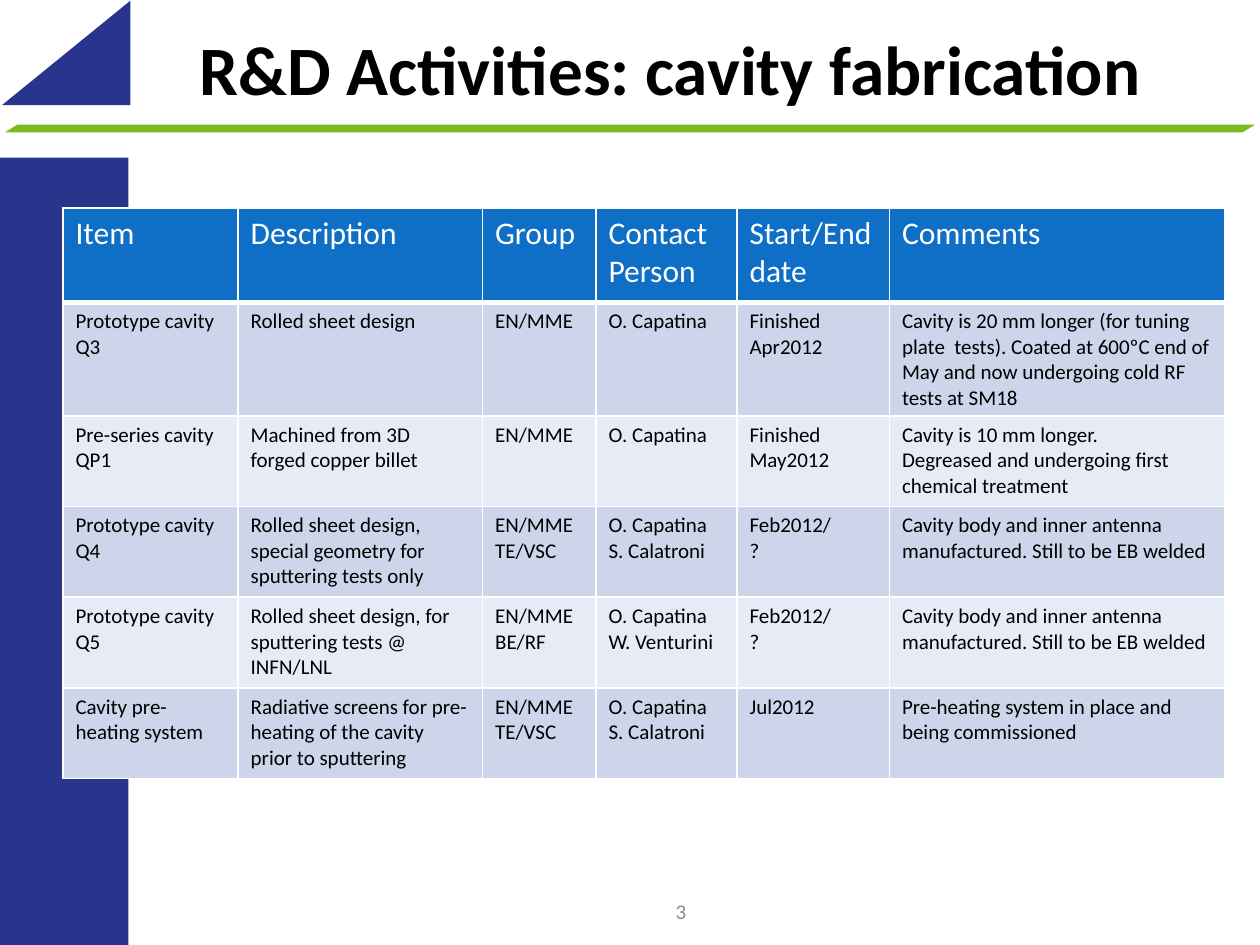
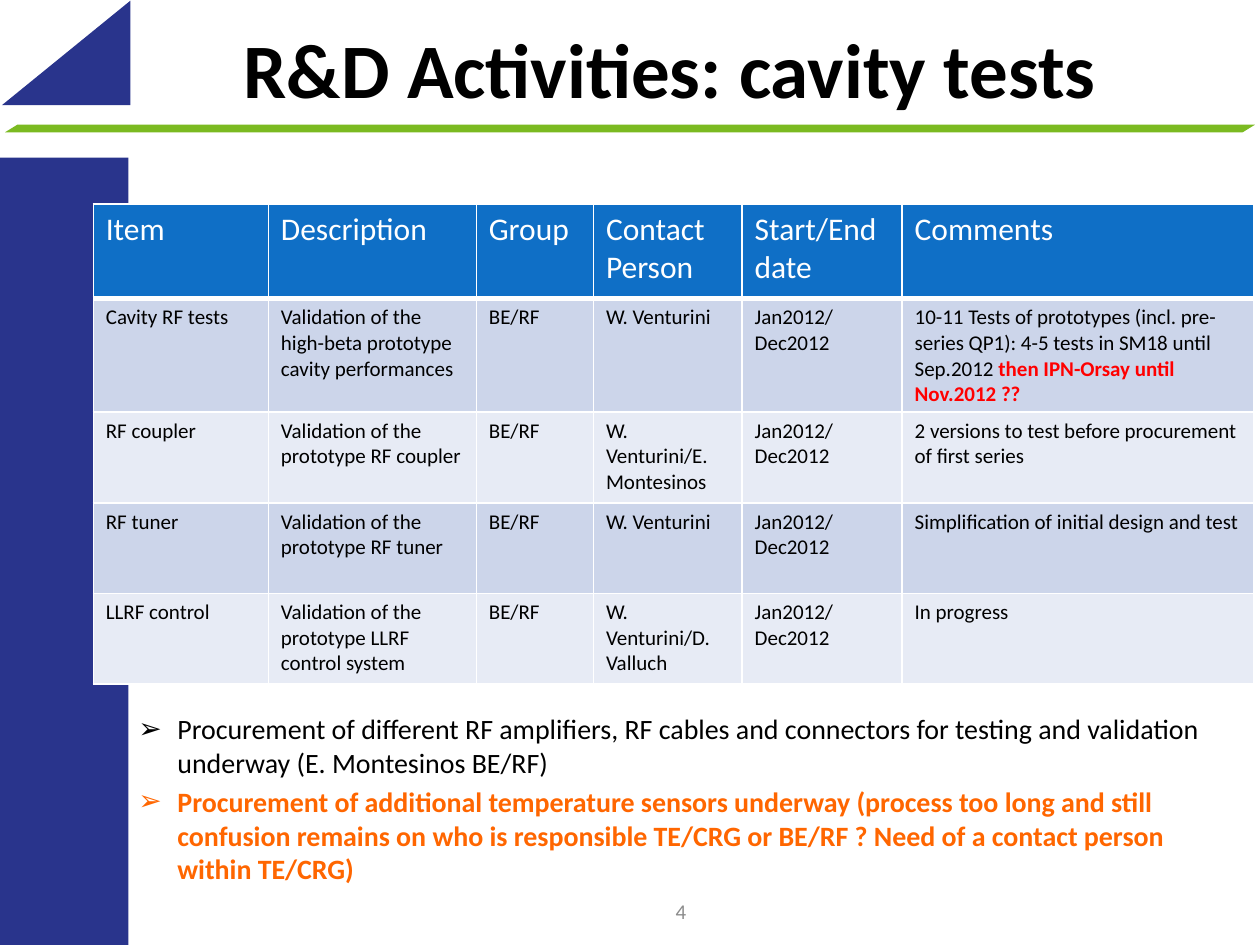
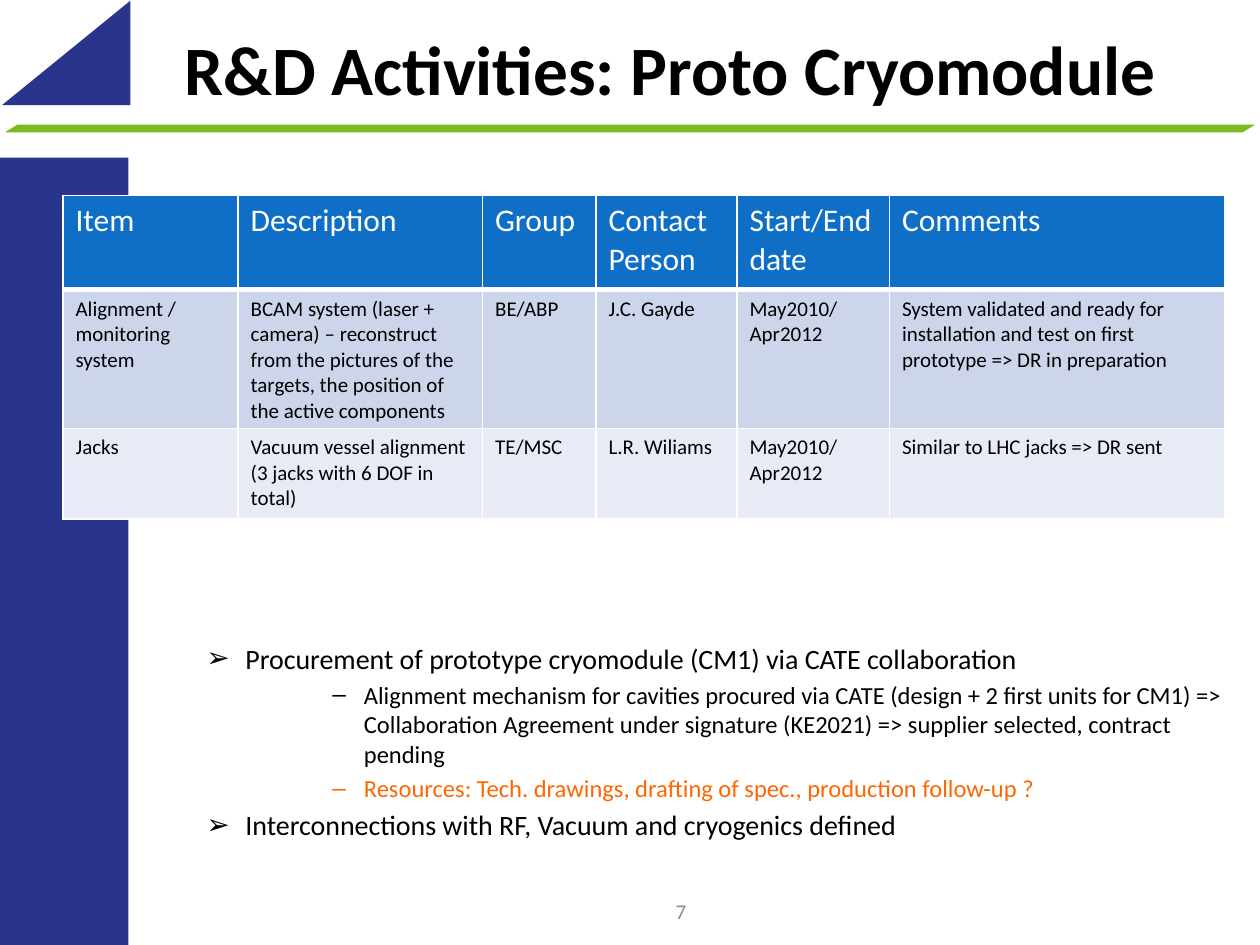
"""Build three R&D activity slides with status tables and notes."""
from lxml.etree import SubElement
from pptx import Presentation
from pptx.dml.color import RGBColor
from pptx.enum.shapes import MSO_SHAPE as SHAPE
from pptx.enum.text import MSO_ANCHOR as ANCHOR, PP_ALIGN as ALIGN
from pptx.oxml.ns import qn
from pptx.util import Inches, Pt

NAVY = RGBColor(0x29, 0x34, 0x8C)
GREEN = RGBColor(0x7B, 0xBA, 0x21)
BLUE = RGBColor(0x0F, 0x6F, 0xC6)
BAND_DARK = RGBColor(0xCC, 0xD5, 0xEA)
BAND_LIGHT = RGBColor(0xE7, 0xEB, 0xF5)
WHITE = RGBColor(0xFF, 0xFF, 0xFF)
BLACK = RGBColor(0, 0, 0)
GREY = RGBColor(0x8C, 0x8C, 0x8C)
RED = RGBColor(0xFF, 0, 0)
ORANGE = RGBColor(0xFF, 0x66, 0)

HEADER = ["Item", "Description", "Group", "Contact Person", "Start/End date", "Comments"]
COLS = [1.39, 1.94, 0.9, 1.12, 1.21, 2.66]
DECOR = [
    (SHAPE.RECTANGLE, (0, 1.25, 1.02, 6.28), 0, NAVY),
    (SHAPE.RIGHT_TRIANGLE, (0.11, -0.09, 0.83, 1.02), 270, NAVY),
    (SHAPE.PARALLELOGRAM, (0.04, 0.99, 9.92, 0.06), 0, GREEN),
]
BULLETS = {
    1: {"char": "➢", "left": 0.81, "hang": -0.31, "size": 16},
    3: {"char": "–", "left": 1.75, "hang": -0.25, "size": 14},
}
WELDING = "Cavity body and inner antenna manufactured. Still to be EB welded"
SLIDES = [
    {
        "title": "R&D Activities: cavity fabrication", "size": 39.6, "number": "3",
        "at": (0.5, 1.65), "cols": COLS,
        "rows": [
            ["Prototype cavity Q3", "Rolled sheet design", "EN/MME", "O. Capatina",
             "Finished Apr2012",
             "Cavity is 20 mm longer (for tuning plate  tests). Coated at 600ºC end of May "
             "and now undergoing cold RF tests at SM18"],
            ["Pre-series cavity QP1", "Machined from 3D forged copper billet", "EN/MME",
             "O. Capatina", "Finished May2012",
             "Cavity is 10 mm longer.\nDegreased and undergoing first chemical treatment"],
            ["Prototype cavity Q4",
             "Rolled sheet design, special geometry for sputtering tests only",
             "EN/MME\nTE/VSC", "O. Capatina\nS. Calatroni", "Feb2012/\v?", WELDING],
            ["Prototype cavity Q5", "Rolled sheet design, for sputtering tests @ INFN/LNL",
             "EN/MME\nBE/RF", "O. Capatina\nW. Venturini", "Feb2012/\v?", WELDING],
            ["Cavity pre-heating system",
             "Radiative screens for pre-heating of the cavity prior to sputtering",
             "EN/MME\nTE/VSC", "O. Capatina\nS. Calatroni", "Jul2012",
             "Pre-heating system in place and being commissioned"],
        ],
        "notes": [],
    },
    {
        "title": "R&D Activities: cavity tests", "size": 44, "number": "4",
        "at": (0.74, 1.62), "cols": [1.39, 1.65, 0.93, 1.18, 1.27, 2.79],
        "rows": [
            ["Cavity RF tests", "Validation of the high-beta prototype cavity performances",
             "BE/RF", "W. Venturini", "Jan2012/Dec2012",
             "10-11 Tests of prototypes (incl. pre-series QP1): 4-5 tests in SM18 until "
             "Sep.2012 |then IPN-Orsay until Nov.2012 ??"],
            ["RF coupler", "Validation of the prototype RF coupler", "BE/RF",
             "W. Venturini/E. Montesinos", "Jan2012/Dec2012",
             "2 versions to test before procurement of first series"],
            ["RF tuner", "Validation of the prototype RF tuner", "BE/RF", "W. Venturini",
             "Jan2012/Dec2012", "Simplification of initial design and test"],
            ["LLRF control", "Validation of the prototype LLRF control system", "BE/RF",
             "W. Venturini/D. Valluch", "Jan2012/Dec2012", "In progress"],
        ],
        "notes_at": (0.5, 5.6, 9.22, 1.38),
        "notes": [
            (1, BLACK, False, "Procurement of different RF amplifiers, RF cables and connectors "
             "for testing and validation underway (E. Montesinos BE/RF)"),
            (1, ORANGE, True, "Procurement of additional temperature sensors underway (process "
             "too long and still confusion remains on who is responsible TE/CRG or BE/RF ? "
             "Need of a contact person within TE/CRG)"),
        ],
    },
    {
        "title": "R&D Activities: Proto Cryomodule", "size": 39.6, "number": "7",
        "at": (0.5, 1.55), "cols": COLS,
        "rows": [
            ["Alignment / monitoring system",
             "BCAM system (laser + camera) – reconstruct from the pictures of the targets, "
             "the position of the active components",
             "BE/ABP", "J.C. Gayde", "May2010/Apr2012",
             "System validated and ready for installation and test on first prototype "
             "=> DR in preparation"],
            ["Jacks", "Vacuum vessel alignment (3 jacks with 6 DOF in total)", "TE/MSC",
             "L.R. Wiliams", "May2010/Apr2012", "Similar to LHC jacks => DR sent"],
        ],
        "notes_at": (1.04, 5.04, 9, 1.62),
        "notes": [
            (1, BLACK, False, "Procurement of prototype cryomodule (CM1) via CATE collaboration"),
            (3, BLACK, False, "Alignment mechanism for cavities procured via CATE (design + 2 "
             "first units for CM1) => Collaboration Agreement under signature (KE2021) => "
             "supplier selected, contract pending"),
            (3, ORANGE, False, "Resources: Tech. drawings, drafting of spec., production follow-up ?"),
            (1, BLACK, False, "Interconnections with RF, Vacuum and cryogenics defined"),
        ],
    },
]


def style(r, size, color, bold=False):
    """Apply the shared font with the given format to a run."""
    for name, value in {"name": "Calibri", "size": Pt(size), "bold": bold}.items():
        setattr(r.font, name, value)
    r.font.color.rgb = color


def add_text(s, at, anchor=ANCHOR.TOP):
    """Add a wrapping text box and return its text frame."""
    tf = s.shapes.add_textbox(*map(Inches, at)).text_frame
    tf.word_wrap = True
    tf.vertical_anchor = anchor
    return tf


prs = Presentation()
prs.slide_width, prs.slide_height = Inches(10), Inches(7.5)

for data in SLIDES:
    s = prs.slides.add_slide(prs.slide_layouts[6])

    for kind, at, rotation, color in DECOR:
        sp = s.shapes.add_shape(kind, *map(Inches, at))
        sp.rotation = rotation
        sp.shadow.inherit = False
        sp.fill.solid()
        sp.fill.fore_color.rgb = color
        sp.line.fill.background()
        if kind == SHAPE.PARALLELOGRAM:
            sp.adjustments[0] = 1.625

    for text, at, size, color, bold in [
        (data["title"], (1.14, 0, 8.36, 1.07), data["size"], BLACK, True),
        (data["number"], (4.24, 7.03, 2.33, 0.4), 12, GREY, False),
    ]:
        p = add_text(s, at, ANCHOR.MIDDLE).paragraphs[0]
        p.alignment = ALIGN.CENTER
        p.text = text
        style(p.runs[0], size, color, bold)

    rows = [HEADER] + data["rows"]
    heights = [0.75] + [0.72] * len(data["rows"])
    size = (sum(data["cols"]), sum(heights))
    table = s.shapes.add_table(len(rows), len(HEADER), *map(Inches, data["at"] + size)).table
    table.first_row = table.horz_banding = False
    for column, width in zip(table.columns, data["cols"]):
        column.width = Inches(width)
    for i, texts in enumerate(rows):
        table.rows[i].height = Inches(heights[i])
        fill = BLUE if i == 0 else BAND_DARK if i % 2 else BAND_LIGHT
        for j, text in enumerate(texts):
            cell = table.cell(i, j)
            tcPr = cell._tc.get_or_add_tcPr()
            for side in ("lnL", "lnR", "lnT", "lnB"):
                weight = 3 if i == 0 and side == "lnB" else 1
                ln = SubElement(tcPr, qn(f"a:{side}"), w=str(Pt(weight)))
                SubElement(SubElement(ln, qn("a:solidFill")), qn("a:srgbClr"), val=str(WHITE))
            cell.fill.solid()
            cell.fill.fore_color.rgb = fill
            plain, _, alert = text.partition("|")
            tf = cell.text_frame
            tf.text = plain
            for p in tf.paragraphs:
                for r in p.runs:
                    style(r, 12 if i else 18, BLACK if i else WHITE)
            if alert:
                r = p.add_run()
                r.text = alert
                style(r, 12, RED, True)

    if data["notes"]:
        tf = add_text(s, data["notes_at"])
        for i, (level, color, bold, text) in enumerate(data["notes"]):
            p = tf.add_paragraph() if i else tf.paragraphs[0]
            bullet = BULLETS[level]
            p.level = level
            pPr = p._p.get_or_add_pPr()
            pPr.set("marL", str(Inches(bullet["left"])))
            pPr.set("indent", str(Inches(bullet["hang"])))
            SubElement(pPr, qn("a:buFont"), typeface="Arial")
            SubElement(pPr, qn("a:buChar"), char=bullet["char"])
            if i:
                p.space_before = Pt(0.2 * bullet["size"])
            r = p.add_run()
            r.text = text
            style(r, bullet["size"], color, bold)

prs.save("out.pptx")
